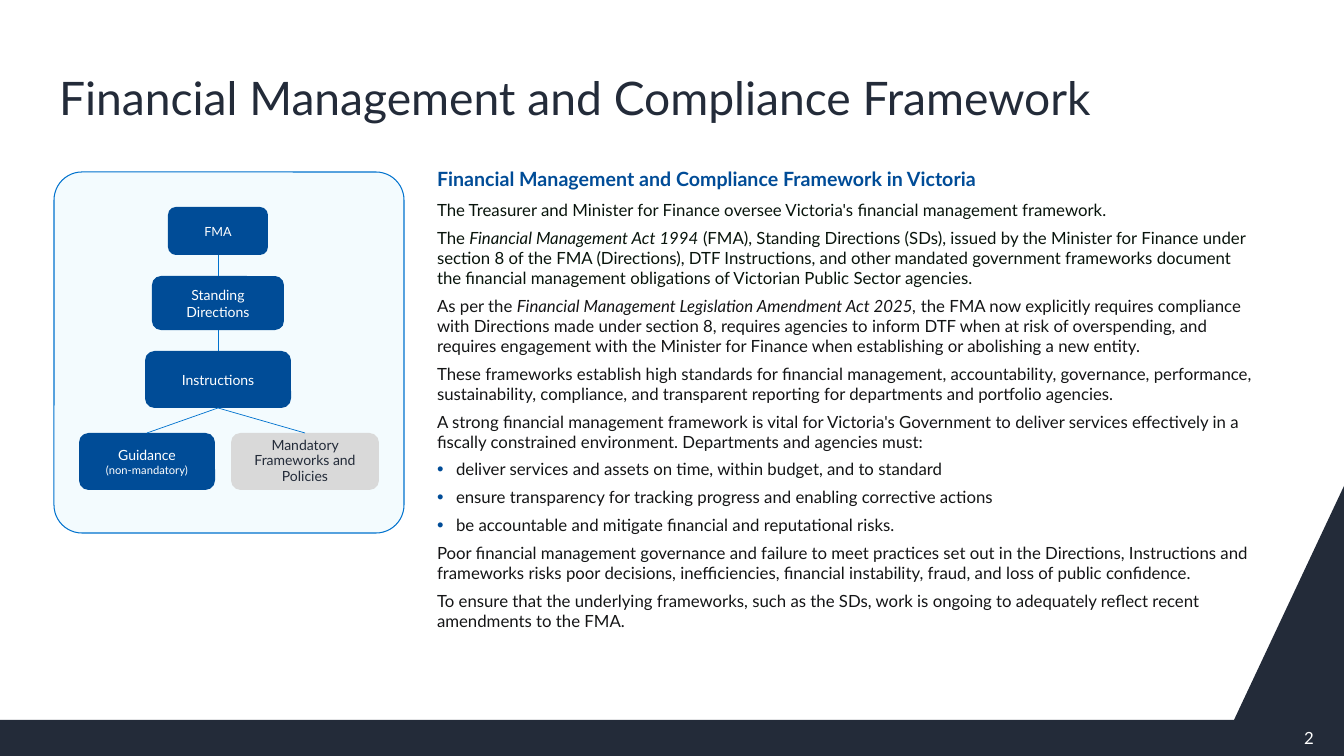
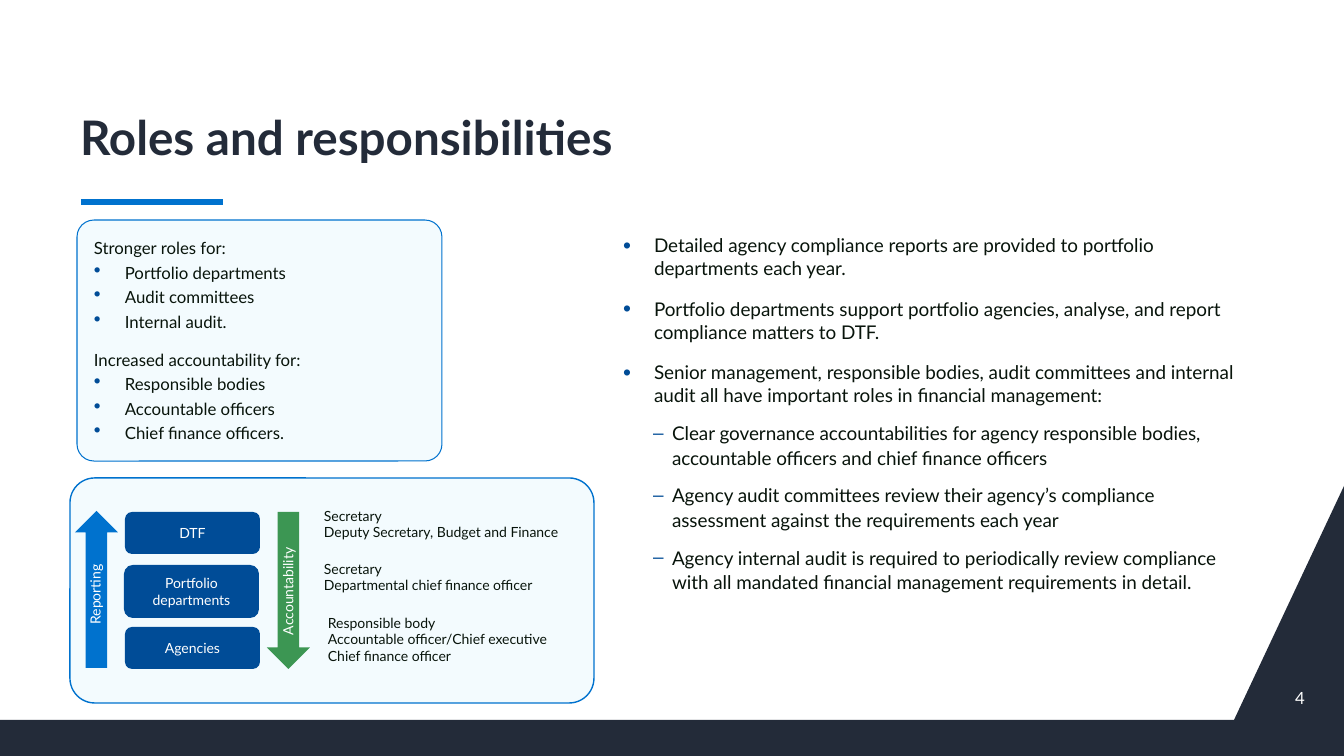
from lxml.etree import SubElement
from pptx import Presentation
from pptx.dml.color import RGBColor
from pptx.enum.shapes import MSO_CONNECTOR, MSO_SHAPE as SHAPE
from pptx.enum.text import MSO_ANCHOR as ANCHOR, MSO_AUTO_SIZE, PP_ALIGN as ALIGN
from pptx.oxml.ns import qn
from pptx.util import Emu, Pt

PX = 914400 / 100.8
SLIDE_W, SLIDE_H = 1344, 756
FONT = "Lato"

NAVY = RGBColor(0x23, 0x2B, 0x39)
BLUE = RGBColor(0x00, 0x4C, 0x97)
BRIGHT = RGBColor(0x00, 0x72, 0xCE)
PALE = RGBColor(0xF3, 0xFB, 0xFE)
GREY = RGBColor(0xD9, 0xD9, 0xD9)
GREEN = RGBColor(0x3C, 0x96, 0x53)
WHITE = RGBColor(0xFF, 0xFF, 0xFF)
INK = RGBColor(0x08, 0x14, 0x0B)
CHARCOAL = RGBColor(0x14, 0x15, 0x16)

TITLE = dict(size=34, color=NAVY, line_spacing=0.9)
LABEL = dict(size=10, color=WHITE, alignment=ALIGN.CENTER)
PLAIN = dict(size=10, color=INK)
NUMBER = dict(size=12, color=WHITE, alignment=ALIGN.RIGHT)

HEADING = dict(size=14, color=BLUE, bold=True, after=4)
TEXT = dict(size=12, color=INK, before=2.4, after=3)
TEXT_DARK = TEXT | dict(color=CHARCOAL)
TEXT_BULLET = TEXT_DARK | dict(level=2, bullet="•", bullet_size=110, left=19, hang=19)

CARD_TEXT = dict(size=12, color=INK, after=3)
CARD_BULLET = CARD_TEXT | dict(bullet="•", bullet_size=120, left=31, hang=31)
POINT = CARD_BULLET | dict(size=13.5, before=10)
SUBPOINT = dict(size=13.5, color=INK, before=6, after=3, line_spacing=1.1,
                level=1, bullet="–", bullet_size=100, left=49, hang=19)


def px(n):
    return Emu(round(n * PX))


def set_bullet(p, style):
    pPr = p._p.get_or_add_pPr()
    pPr.set("marL", str(px(style.get("left", 0))))
    pPr.set("indent", str(-px(style.get("hang", 0))))
    if "bullet" not in style:
        SubElement(pPr, qn("a:buNone"))
        return
    clr = SubElement(pPr, qn("a:buClr"))
    SubElement(clr, qn("a:srgbClr"), val=str(BLUE))
    SubElement(pPr, qn("a:buSzPct"), val=str(style["bullet_size"] * 1000))
    SubElement(pPr, qn("a:buChar"), char=style["bullet"])


def write(tf, paras):
    """Fill a text frame from (text, style) pairs; *asterisks* mark italics."""
    for i, (text, style) in enumerate(paras):
        p = tf.paragraphs[0] if i == 0 else tf.add_paragraph()
        set_bullet(p, style)
        spacing = dict(
            level=style.get("level", 0),
            alignment=style.get("alignment", ALIGN.LEFT),
            line_spacing=style.get("line_spacing", 1.0),
            space_before=Pt(style.get("before", 0) if i else 0),
            space_after=Pt(style.get("after", 0)),
        )
        for name, value in spacing.items():
            setattr(p, name, value)
        for n, part in enumerate(text.split("*")):
            r = p.add_run()
            r.text = part
            look = dict(name=FONT, size=Pt(style["size"]),
                        bold=style.get("bold", False), italic=n % 2 == 1)
            for name, value in look.items():
                setattr(r.font, name, value)
            r.font.color.rgb = style["color"]


def set_frame(tf, anchor=ANCHOR.TOP, inset=(10, 5)):
    side, end = map(px, inset)
    frame = dict(word_wrap=True, auto_size=MSO_AUTO_SIZE.NONE, vertical_anchor=anchor,
                 margin_left=side, margin_right=side, margin_top=end, margin_bottom=end)
    for name, value in frame.items():
        setattr(tf, name, value)


def add_box(slide, kind, x, y, w, h, fill, paras=(), line=None, adj=None, inset=(10, 5)):
    sp = slide.shapes.add_shape(kind, px(x), px(y), px(w), px(h))
    sp.shadow.inherit = False
    sp.fill.solid()
    sp.fill.fore_color.rgb = fill
    if line:
        sp.line.color.rgb = BRIGHT
        sp.line.width = Pt(line)
    else:
        sp.line.fill.background()
    if adj is not None:
        sp.adjustments[0] = adj
    set_frame(sp.text_frame, ANCHOR.MIDDLE, inset)
    write(sp.text_frame, paras)
    return sp


def add_text(slide, x, y, w, h, paras, anchor=ANCHOR.TOP, rotation=0):
    sp = slide.shapes.add_textbox(px(x), px(y), px(w), px(h))
    sp.rotation = rotation
    set_frame(sp.text_frame, anchor)
    write(sp.text_frame, paras)


def add_line(slide, width, ends=(0, 0, 0, 0)):
    cn = slide.shapes.add_connector(MSO_CONNECTOR.STRAIGHT, *map(px, ends))
    cn.line.color.rgb = BRIGHT
    cn.line.width = Pt(width)
    SubElement(cn._element.spPr, qn("a:effectLst"))
    return cn


def fill_placeholder(sp, box, paras, anchor=ANCHOR.TOP):
    sp.left, sp.top, sp.width, sp.height = map(px, box)
    set_frame(sp.text_frame, anchor, (4, 5))
    write(sp.text_frame, paras)


def add_footer_band(slide):
    fb = slide.shapes.build_freeform(1234, 720, scale=PX)
    fb.add_line_segments([(0, 720), (0, SLIDE_H), (SLIDE_W, SLIDE_H), (SLIDE_W, 486)])
    sp = fb.convert_to_shape()
    sp.shadow.inherit = False
    sp.fill.solid()
    sp.fill.fore_color.rgb = NAVY
    sp.line.fill.background()


def new_slide(prs, title, title_box, title_style, body_box, body, number, number_at):
    slide = prs.slides.add_slide(prs.slide_layouts[1])
    add_footer_band(slide)
    fill_placeholder(slide.shapes.title, title_box, [(title, title_style)], ANCHOR.BOTTOM)
    fill_placeholder(slide.placeholders[1], body_box, body)
    add_text(slide, *number_at, 48, 40, [(number, NUMBER)], ANCHOR.MIDDLE)
    return slide


def hierarchy_panel(slide, x, y, w, h):
    add_box(slide, SHAPE.ROUNDED_RECTANGLE, x, y, w, h, PALE, line=0.75, adj=0.08)
    small = LABEL | dict(size=8)
    dark = LABEL | dict(color=NAVY, line_spacing=0.9)
    nodes = {
        "fma": (114, 35, 100, 48, BLUE, [("FMA", LABEL | dict(size=9))]),
        "directions": (98, 104, 132, 54, BLUE, [("Standing", LABEL), ("Directions", LABEL)]),
        "instructions": (91, 179, 146, 57, BLUE, [("Instructions", LABEL)]),
        "guidance": (25, 261, 136, 57, BLUE, [("Guidance", LABEL), ("(non-mandatory)", small)]),
        "policies": (177, 261, 148, 57, GREY, [("Mandatory Frameworks and Policies", dark)]),
    }
    boxes = {
        name: add_box(slide, SHAPE.ROUNDED_RECTANGLE, x + dx, y + dy, bw, bh, fill, paras)
        for name, (dx, dy, bw, bh, fill, paras) in nodes.items()
    }
    for parent, child in (("fma", "directions"), ("directions", "instructions"),
                          ("instructions", "guidance"), ("instructions", "policies")):
        cn = add_line(slide, 0.5)
        cn.begin_connect(boxes[parent], 2)
        cn.end_connect(boxes[child], 0)


def roles_card(slide, x, y, w, h):
    lists = (
        ("Stronger roles for:", ("Portfolio departments", "Audit committees", "Internal audit.")),
        ("Increased accountability for:",
         ("Responsible bodies", "Accountable officers", "Chief finance officers.")),
    )
    paras = []
    for lead, items in lists:
        paras.append((lead, CARD_TEXT | dict(before=10)))
        paras += [(item, CARD_BULLET) for item in items]
    add_box(slide, SHAPE.ROUNDED_RECTANGLE, x, y, w, h, PALE, paras,
            line=0.75, adj=0.07, inset=(12, 5))


def reporting_panel(slide, x, y, w, h):
    add_box(slide, SHAPE.ROUNDED_RECTANGLE, x, y, w, h, PALE, line=1, adj=0.11)
    tiers = (
        ("DTF", 55, 34, 42, 244, 24, ("Secretary", "Deputy Secretary, Budget and Finance")),
        ("Portfolio departments", 54, 87, 53, 244, 77,
         ("Secretary", "Departmental chief finance officer")),
        ("Agencies", 55, 149, 42, 248, 131,
         ("Responsible body", "Accountable officer/Chief executive", "Chief finance officer")),
    )
    for name, dx, dy, bh, people_dx, people_dy, people in tiers:
        add_box(slide, SHAPE.ROUNDED_RECTANGLE, x + dx, y + dy, 135, bh, BLUE, [(name, LABEL)])
        add_text(slide, x + people_dx, y + people_dy, 280, 17 * len(people) + 10,
                 [(person, PLAIN) for person in people])
    arrows = (
        ("Reporting", SHAPE.UP_ARROW, BRIGHT, 5, 33, 25, 110, 94),
        ("Accountability", SHAPE.DOWN_ARROW, GREEN, 197, 34, 218, 100, 135),
    )
    for name, kind, color, dx, dy, mid_x, mid_y, length in arrows:
        add_box(slide, kind, x + dx, y + dy, 43, 157, color)
        add_text(slide, x + mid_x - length / 2, y + mid_y - 14, length, 27,
                 [(name, PLAIN | dict(color=WHITE))], rotation=270)


def framework_slide(prs):
    body = [
        ("Financial Management and Compliance Framework in Victoria", HEADING),
        ("The Treasurer and Minister for Finance oversee Victoria's financial management "
         "framework.", TEXT),
        ("The *Financial Management Act 1994* (FMA), Standing Directions (SDs), issued by the "
         "Minister for Finance under section 8 of the FMA (Directions), DTF Instructions, and "
         "other mandated government frameworks document the financial management obligations "
         "of Victorian Public Sector agencies.", TEXT),
        ("As per the *Financial Management Legislation Amendment Act 2025, *the FMA now "
         "explicitly requires compliance with Directions made under section 8, requires "
         "agencies to inform DTF when at risk of overspending, and requires engagement with "
         "the Minister for Finance when establishing or abolishing a new entity.", TEXT_DARK),
        ("These frameworks establish high standards for financial management, accountability, "
         "governance, performance, sustainability, compliance, and transparent reporting for "
         "departments and portfolio agencies.", TEXT_DARK),
        ("A strong financial management framework is vital for Victoria's Government to deliver "
         "services effectively in a fiscally constrained environment. Departments and agencies "
         "must:", TEXT_DARK),
        ("deliver services and assets on time, within budget, and to standard", TEXT_BULLET),
        ("ensure transparency for tracking progress and enabling corrective actions", TEXT_BULLET),
        ("be accountable and mitigate financial and reputational risks.", TEXT_BULLET),
        ("Poor financial management governance and failure to meet practices set out in the "
         "Directions, Instructions and frameworks risks poor decisions, inefficiencies, "
         "financial instability, fraud, and loss of public confidence.", TEXT_DARK),
        ("To ensure that the underlying frameworks, such as the SDs, work is ongoing to "
         "adequately reflect recent amendments to the FMA.", TEXT_DARK),
    ]
    slide = new_slide(prs, "Financial Management and Compliance Framework", (55, 57, 1207, 74),
                      TITLE | dict(size=33), (433, 162, 828, 554), body, "2", (1276, 718))
    hierarchy_panel(slide, 54, 172, 350, 361)


def roles_slide(prs):
    body = [
        ("Detailed agency compliance reports are provided to portfolio departments each year.",
         POINT),
        ("Portfolio departments support portfolio agencies, analyse, and report compliance "
         "matters to DTF.", POINT),
        ("Senior management, responsible bodies, audit committees and internal audit all have "
         "important roles in financial management:", POINT),
        ("Clear governance accountabilities for agency responsible bodies, accountable officers "
         "and chief finance officers", SUBPOINT),
        ("Agency audit committees review their agency’s compliance assessment against the "
         "requirements each year", SUBPOINT),
        ("Agency internal audit is required to periodically review compliance with all mandated "
         "financial management requirements in detail.", SUBPOINT),
    ]
    slide = new_slide(prs, "Roles and responsibilities", (76, 83, 1159, 88),
                      TITLE | dict(bold=True), (619, 229, 620, 442), body, "4", (1267, 678))
    add_line(slide, 4.5, (81, 202, 223, 202))
    roles_card(slide, 77, 220, 365, 241)
    reporting_panel(slide, 70, 478, 524, 225)


def main():
    prs = Presentation()
    prs.slide_width, prs.slide_height = px(SLIDE_W), px(SLIDE_H)
    framework_slide(prs)
    roles_slide(prs)
    prs.save("out.pptx")


if __name__ == "__main__":
    main()
